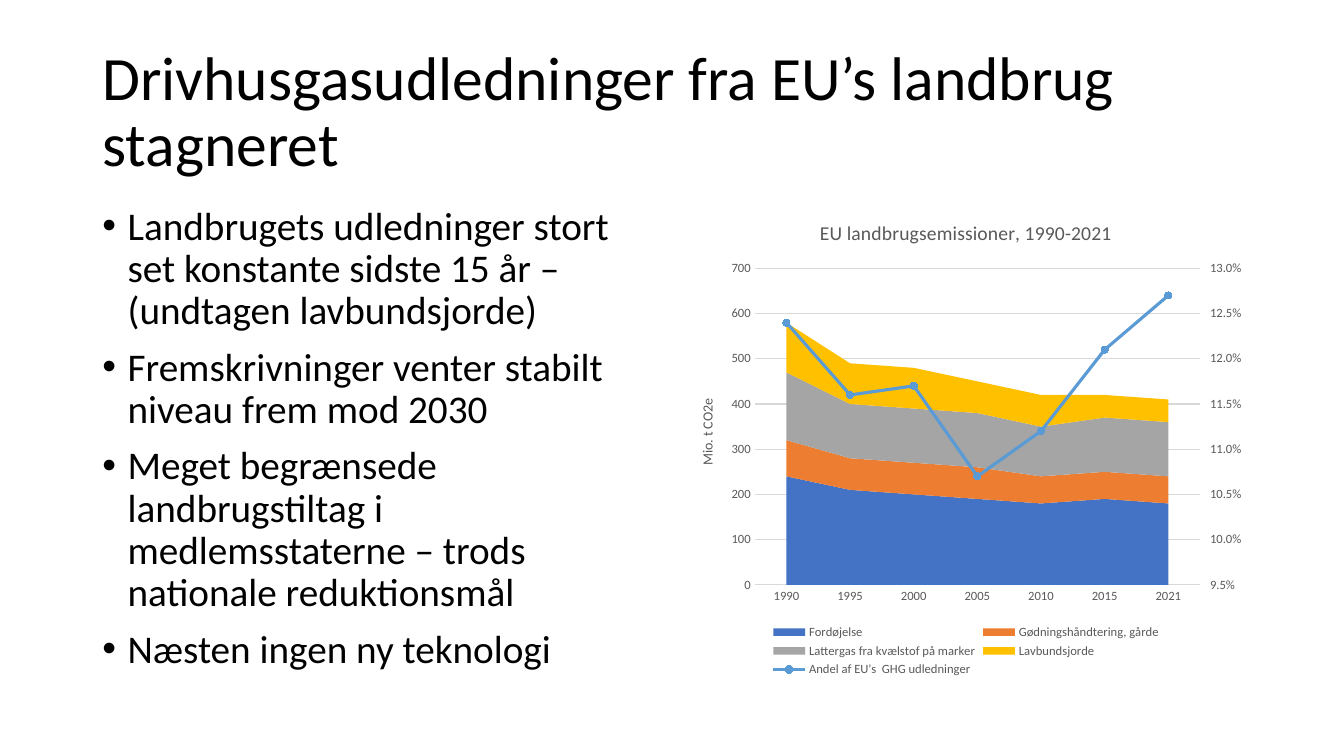
from lxml import etree
from pptx import Presentation
from pptx import util as u
from pptx.chart.data import CategoryChartData
from pptx.dml.color import RGBColor
from pptx.enum import chart as ch, text
from pptx.oxml import parse_xml
from pptx.oxml.ns import nsdecls, qn

COLORS = {"black": "000000", "gray": "595959", "grid": "D9D9D9", "share": "5B9BD5",
          "digestion": "4472C4", "manure": "ED7D31", "nitrous": "A5A5A5", "lowland": "FFC000"}
FONT = "Calibri"
BULLETS = [
    "Landbrugets udledninger stort set konstante sidste 15 år – (undtagen lavbundsjorde)",
    "Fremskrivninger venter stabilt niveau frem mod 2030",
    "Meget begrænsede landbrugstiltag i medlemsstaterne – trods nationale reduktionsmål",
    "Næsten ingen ny teknologi",
]
YEARS = ["1990", "1995", "2000", "2005", "2010", "2015", "2021"]
EMISSIONS = [
    ("Fordøjelse", "digestion", [240, 210, 200, 190, 180, 190, 180]),
    ("Gødningshåndtering, gårde", "manure", [80, 70, 70, 70, 60, 60, 60]),
    ("Lattergas fra kvælstof på marker", "nitrous", [150, 120, 120, 120, 110, 120, 120]),
    ("Lavbundsjorde", "lowland", [110, 90, 90, 70, 70, 50, 50]),
]
SHARE = [0.124, 0.116, 0.117, 0.107, 0.112, 0.121, 0.127]


def rgb(name):
    return RGBColor.from_string(COLORS[name])


def write(p, content, size=28, color="black", spacing=None, before=None, indent=None, align=None):
    r = p.add_run()
    r.text = content
    r.font.size, r.font.name, r.font.bold = u.Pt(size), FONT, False
    r.font.color.rgb = rgb(color)
    if spacing:
        p.line_spacing = spacing
    if before is not None:
        p.space_before = u.Pt(before)
    if align is not None:
        p.alignment = align
    if indent:
        pPr = p._p.get_or_add_pPr()
        pPr.set("marL", str(u.Pt(indent)))
        pPr.set("indent", str(-u.Pt(indent)))


prs = Presentation()
prs.slide_width, prs.slide_height = u.Pt(960), u.Pt(540)
s = prs.slides.add_slide(prs.slide_layouts[1])

# Title and bullet list
title, body = s.placeholders
for sp, box, anchor in [
    (title, (66, 28.75, 828, 104.38), text.MSO_ANCHOR.MIDDLE),
    (body, (66, 143.75, 408, 342.62), text.MSO_ANCHOR.TOP),
]:
    sp.left, sp.top, sp.width, sp.height = map(u.Pt, box)
    sp.text_frame.vertical_anchor = anchor
    sp.text_frame.auto_size = text.MSO_AUTO_SIZE.NONE
    sp.text_frame.word_wrap = True
write(title.text_frame.paragraphs[0], "Drivhusgasudledninger fra EU’s landbrug stagneret",
      size=44, spacing=0.9, before=0, align=text.PP_ALIGN.LEFT)
for i, item in enumerate(BULLETS):
    p = body.text_frame.add_paragraph() if i else body.text_frame.paragraphs[0]
    write(p, item, spacing=0.9, before=10, indent=18)

# Stacked emissions, with the share as the last series
data = CategoryChartData(number_format="0")
data.categories = YEARS
for name, _, values in EMISSIONS:
    data.add_series(name, values)
data.add_series("Andel af EU's  GHG udledninger", SHARE, number_format="0.0%")
chart = s.shapes.add_chart(ch.XL_CHART_TYPE.AREA_STACKED, u.Pt(486), u.Pt(143.75),
                           u.Pt(408), u.Pt(342.62), data).chart
chart.font.size, chart.font.name = u.Pt(9), FONT
chart.font.color.rgb = rgb("gray")
for series, (_, color, _) in zip(chart.plots[0].series, EMISSIONS):
    series.format.fill.solid()
    series.format.fill.fore_color.rgb = rgb(color)

# Titles and legend
chart.has_title = True
write(chart.chart_title.text_frame.paragraphs[0], "EU landbrugsemissioner, 1990-2021", size=14, color="gray")
chart.chart_title.include_in_layout = False
chart.has_legend = True
chart.legend.position = ch.XL_LEGEND_POSITION.BOTTOM
chart.legend.include_in_layout = False

# Primary axes
years, tonnes = chart.category_axis, chart.value_axis
for axis in (years, tonnes):
    axis.major_tick_mark = axis.minor_tick_mark = ch.XL_TICK_MARK.NONE
    axis.tick_labels.font.size = u.Pt(9)
    axis.tick_labels.font.color.rgb = rgb("gray")
years.has_major_gridlines = False
tonnes.has_major_gridlines = True
for line in (years.format.line, tonnes.major_gridlines.format.line):
    line.color.rgb = rgb("grid")
    line.width = u.Pt(0.75)
tonnes.format.line.fill.background()
tonnes.minimum_scale, tonnes.maximum_scale, tonnes.major_unit = 0, 700, 100
tonnes.tick_labels.number_format = "0"
tonnes.tick_labels.number_format_is_linked = False
write(tonnes.axis_title.text_frame.paragraphs[0], "Mio. t CO2e", size=10, color="gray")
tonnes._element.find(qn("c:crossBetween")).set("val", "between")

# Share line on a secondary axis
plot_area = chart._chartSpace.chart.plotArea
area = plot_area.find(qn("c:areaChart"))
line_chart = parse_xml(
    f'<c:lineChart {nsdecls("c")}><c:grouping val="standard"/><c:varyColors val="0"/>'
    '<c:marker val="1"/><c:axId val="5001"/><c:axId val="5002"/></c:lineChart>')
line_chart.insert(2, area.findall(qn("c:ser"))[-1])
area.addnext(line_chart)
secondary = parse_xml(
    f'<c:axes {nsdecls("c", "a")}>'
    '<c:catAx><c:axId val="5001"/><c:scaling><c:orientation val="minMax"/></c:scaling>'
    '<c:delete val="1"/><c:axPos val="b"/><c:crossAx val="5002"/></c:catAx>'
    '<c:valAx><c:axId val="5002"/><c:scaling><c:orientation val="minMax"/>'
    '<c:max val="0.13"/><c:min val="0.095"/></c:scaling><c:delete val="0"/><c:axPos val="r"/>'
    '<c:numFmt formatCode="0.0%" sourceLinked="0"/><c:majorTickMark val="out"/>'
    '<c:minorTickMark val="none"/><c:tickLblPos val="nextTo"/>'
    '<c:spPr><a:ln><a:noFill/></a:ln></c:spPr><c:crossAx val="5001"/><c:crosses val="max"/>'
    '<c:crossBetween val="between"/><c:majorUnit val="0.005"/></c:valAx></c:axes>')
tonnes._element.addnext(secondary[1])
tonnes._element.addnext(secondary[0])
share = chart.plots[1].series[0]
share.smooth = False
share.format.line.color.rgb = rgb("share")
share.format.line.width = u.Pt(2.25)
share.marker.style, share.marker.size = ch.XL_MARKER_STYLE.CIRCLE, 5
share.marker.format.fill.solid()
share.marker.format.fill.fore_color.rgb = rgb("share")
share.marker.format.line.color.rgb = rgb("share")

# Inner plot position, as fractions of the chart
for old in plot_area.findall(qn("c:layout")):
    plot_area.remove(old)
layout = etree.Element(qn("c:layout"))
manual = etree.SubElement(layout, qn("c:manualLayout"))
for tag, value in [("layoutTarget", "inner"), ("xMode", "edge"), ("yMode", "edge"),
                   ("x", "0.13"), ("y", "0.14"), ("w", "0.78"), ("h", "0.66")]:
    etree.SubElement(manual, qn(f"c:{tag}")).set("val", value)
plot_area.insert(0, layout)

prs.save("out.pptx")
